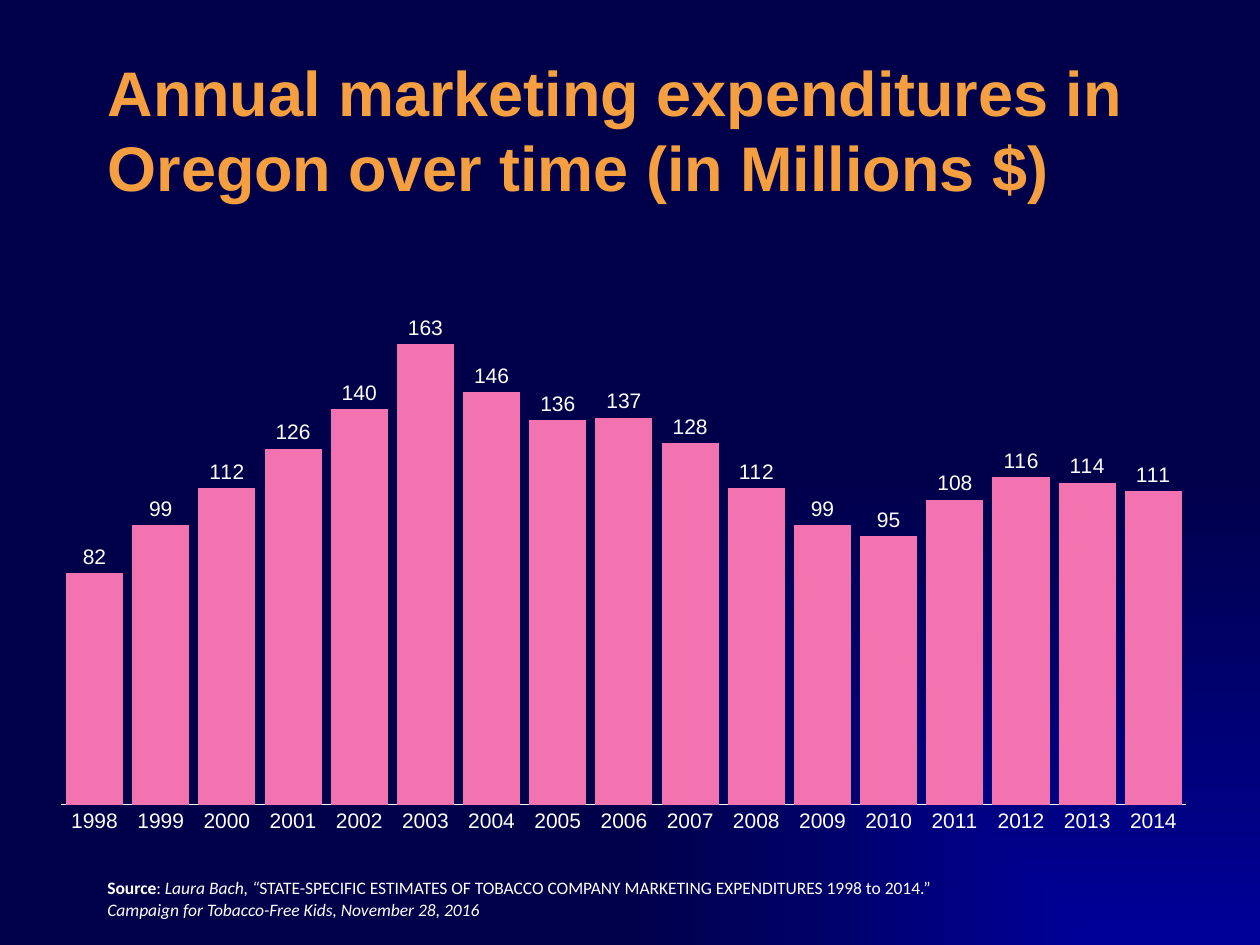
from typing import NamedTuple

from lxml import etree
from pptx import Presentation
from pptx.chart.data import CategoryChartData
from pptx.dml.color import RGBColor
from pptx.enum.chart import XL_CHART_TYPE, XL_LABEL_POSITION, XL_TICK_MARK
from pptx.enum.text import MSO_ANCHOR, MSO_AUTO_SIZE, PP_ALIGN
from pptx.oxml.ns import qn
from pptx.util import Emu, Pt

COLUMN = XL_CHART_TYPE.COLUMN_CLUSTERED
ABOVE = XL_LABEL_POSITION.OUTSIDE_END
NO_TICK = XL_TICK_MARK.NONE
MIDDLE = MSO_ANCHOR.MIDDLE
GROW = MSO_AUTO_SIZE.SHAPE_TO_FIT_TEXT
LEFT = PP_ALIGN.LEFT

NAVY = RGBColor(0x00, 0x00, 0x4A)
BLUE = RGBColor(0x00, 0x00, 0x99)
ORANGE = RGBColor(0xF5, 0x9F, 0x41)
PINK = RGBColor(0xF2, 0x73, 0xAF)
WHITE = RGBColor(0xFF, 0xFF, 0xFF)

SCALE = 914400 / 126  # EMU per px


class Box(NamedTuple):
    left: int
    top: int
    width: int
    height: int


class Part(NamedTuple):
    text: str
    bold: bool = False
    italic: bool = False


TITLE = Box(95, 50, 1115, 158)
CHART = Box(38, 285, 1172, 559)
PLOT = Box(62, 296, 1125, 509)
SOURCE = Box(95, 869, 898, 58)

FIRST_YEAR = 1998
SPEND = (82, 99, 112, 126, 140, 163, 146, 136, 137,
         128, 112, 99, 95, 108, 116, 114, 111)
CITATION = (
    Part("Source", bold=True),
    Part(": "),
    Part("Laura Bach, “", italic=True),
    Part("STATE-SPECIFIC ESTIMATES OF TOBACCO COMPANY MARKETING "
         "EXPENDITURES 1998 to 2014.” "),
    Part("Campaign for Tobacco-Free Kids, November 28, 2016", italic=True),
)


def px(size: int) -> Emu:
    return Emu(round(size * SCALE))


def place(shape, box: Box) -> None:
    shape.left, shape.top, shape.width, shape.height = map(px, box)


def style(font, name: str, size: int, color: RGBColor) -> None:
    font.name, font.size = name, Pt(size)
    font.color.rgb = color


def paint_back(slide) -> None:
    """Glow from the bottom right corner."""
    fill = slide.background.fill
    fill.gradient()
    for stop, color in zip(fill.gradient_stops, (BLUE, NAVY)):
        stop.color.rgb = color
    grad = slide._element.find(".//" + qn("a:gradFill"))
    grad.remove(grad.find(qn("a:lin")))
    glow = etree.Element(qn("a:path"), {"path": "rect"})
    etree.SubElement(glow, qn("a:fillToRect"), {"l": "100000", "t": "100000"})
    grad.find(qn("a:gsLst")).addnext(glow)


def add_title(slide) -> None:
    title = slide.shapes.title
    place(title, TITLE)
    frame = title.text_frame
    frame.text = "Annual marketing expenditures in Oregon over time (in Millions $)"
    frame.vertical_anchor = MIDDLE
    line = frame.paragraphs[0]
    line.alignment = LEFT
    style(line.font, "Arial", 36, ORANGE)
    line.font.bold = True


def fix_plot(chart) -> None:
    """Pin the inner plot area, as shares of the chart."""
    area = chart._chartSpace.chart.plotArea
    old = area.find(qn("c:layout"))
    if old is not None:
        area.remove(old)
    layout = etree.Element(qn("c:layout"))
    manual = etree.SubElement(layout, qn("c:manualLayout"))
    marks = {
        "layoutTarget": "inner", "xMode": "edge", "yMode": "edge",
        "x": round((PLOT.left - CHART.left) / CHART.width, 2),
        "y": round((PLOT.top - CHART.top) / CHART.height, 2),
        "w": round(PLOT.width / CHART.width, 2),
        "h": round(PLOT.height / CHART.height, 2),
    }
    for tag, value in marks.items():
        etree.SubElement(manual, qn("c:" + tag), val=str(value))
    area.insert(0, layout)


def add_chart(slide) -> None:
    data = CategoryChartData(number_format="#,##0")
    data.categories = [str(FIRST_YEAR + i) for i in range(len(SPEND))]
    data.add_series("Series 1", SPEND)
    chart = slide.shapes.add_chart(COLUMN, *map(px, CHART), data).chart
    chart.has_legend = chart.has_title = False
    style(chart.font, "Arial", 10, WHITE)
    fix_plot(chart)

    # Axes
    years = chart.category_axis
    years.major_tick_mark = years.minor_tick_mark = NO_TICK
    years.has_major_gridlines = False
    style(years.tick_labels.font, "Arial", 12, WHITE)
    years.format.line.color.rgb = WHITE
    years.format.line.width = Pt(0.75)
    money = chart.value_axis
    money.minimum_scale, money.maximum_scale = 0, 180
    money.has_major_gridlines = False
    money.visible = False

    # Columns and labels
    plot = chart.plots[0]
    plot.gap_width, plot.overlap = 16, -27
    plot.vary_by_categories = False
    bars = plot.series[0]
    bars.format.fill.solid()
    bars.format.fill.fore_color.rgb = PINK
    labels = bars.data_labels
    labels.show_value = True
    labels.number_format = "#,##0"
    labels.number_format_is_linked = False
    labels.position = ABOVE
    style(labels.font, "Arial", 12, WHITE)


def add_source(slide) -> None:
    frame = slide.shapes.add_textbox(*map(px, SOURCE)).text_frame
    frame.word_wrap = True
    frame.auto_size = GROW
    line = frame.paragraphs[0]
    line.line_spacing = 1.07
    style(line.font, "Calibri", 10, WHITE)
    for part in CITATION:
        run = line.add_run()
        run.text = part.text
        run.font.bold, run.font.italic = part.bold, part.italic


def main() -> None:
    deck = Presentation()
    deck.slide_width, deck.slide_height = px(1260), px(945)
    slide = deck.slides.add_slide(deck.slide_layouts[5])  # title only
    paint_back(slide)
    add_title(slide)
    add_source(slide)
    add_chart(slide)
    deck.save("out.pptx")


if __name__ == "__main__":
    main()
